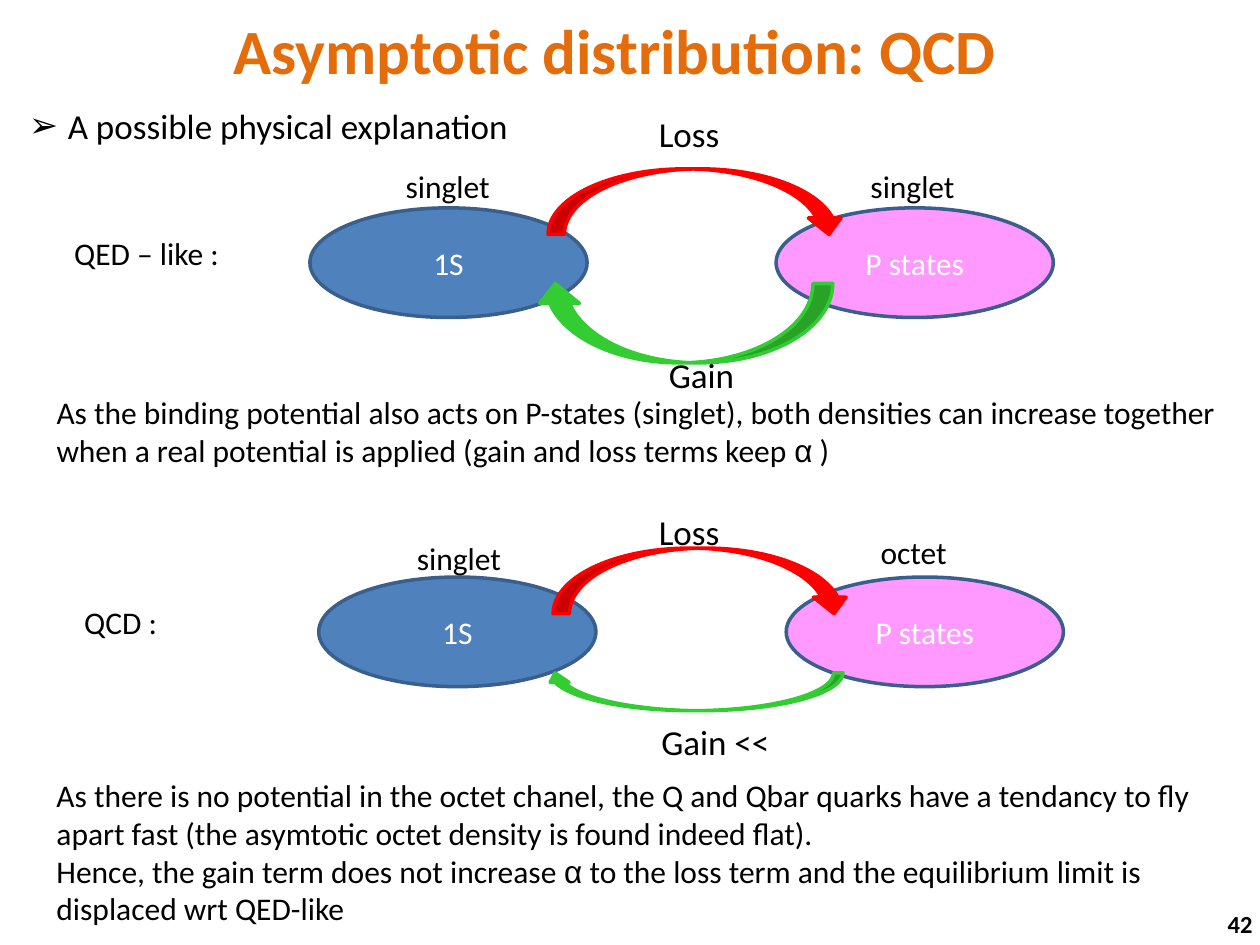
from lxml.etree import SubElement
from pptx import Presentation
from pptx.dml.color import RGBColor
from pptx.enum.shapes import MSO_SHAPE
from pptx.enum.text import MSO_ANCHOR, PP_ALIGN
from pptx.oxml.ns import qn
from pptx.util import Inches, Pt

BLACK, WHITE, ORANGE = "000000", "FFFFFF", "E46C0A"
BLUE, PINK, OUTLINE = "4F81BD", "FF99FF", "3A5F8C"
RED, GREEN = "FF0000", "33CC33"
BODY = {"size": Pt(18), "bold": False}
LABEL = {"size": Pt(20), "bold": False}
TITLE = {"size": Pt(36), "bold": True}
PAGE_NUMBER = {"size": Pt(14), "bold": True}

EXPLANATION = "A possible physical explanation"
QED_CONCLUSION = [
    "As the binding potential also acts on P-states (singlet), both densities "
    "can increase together when a real potential is applied "
    "(gain and loss terms keep α )",
]
QCD_CONCLUSION = [
    "As there is no potential in the octet chanel, the Q and Qbar quarks have "
    "a tendancy to fly apart fast (the asymtotic octet density is found indeed flat).",
    "Hence, the gain term does not increase α to the loss term and the "
    "equilibrium limit is displaced wrt QED-like",
]


def rgb(hex_color):
    """Turn a hex string into a colour."""
    return RGBColor.from_string(hex_color)


def write(paragraph, text, font_format, color=BLACK, align=PP_ALIGN.LEFT):
    """Fill a paragraph, setting Greek letters in Arial."""
    paragraph.alignment = align
    for piece in filter(None, text.replace("α", "|α|").split("|")):
        run = paragraph.add_run()
        run.text = piece
        run.font.name = "Arial" if piece == "α" else "Calibri"
        run.font.color.rgb = rgb(color)
        for name, value in font_format.items():
            setattr(run.font, name, value)


def add_text(slide, box, lines, font_format, color=BLACK, align=PP_ALIGN.LEFT,
             anchor=MSO_ANCHOR.TOP, wrap=True):
    """Add a text box with one paragraph per line."""
    frame = slide.shapes.add_textbox(*map(Inches, box)).text_frame
    frame.word_wrap = wrap
    frame.vertical_anchor = anchor
    for index, line in enumerate(lines):
        paragraph = frame.add_paragraph() if index else frame.paragraphs[0]
        write(paragraph, line, font_format, color, align)
    return frame


def add_label(slide, box, text, font_format=BODY):
    """Add a one-line label that does not wrap."""
    add_text(slide, box, [text], font_format, wrap=False)


def add_bullet(paragraph, mark):
    """Give a paragraph a hanging bullet."""
    properties = paragraph._p.get_or_add_pPr()
    properties.set("marL", str(Inches(0.31)))
    properties.set("indent", str(-Inches(0.31)))
    SubElement(properties, qn("a:buFont"), typeface="Arial")
    SubElement(properties, qn("a:buChar"), char=mark)


def add_figure(slide, kind, box, fill, line):
    """Add a filled and outlined preset shape."""
    figure = slide.shapes.add_shape(kind, *map(Inches, box))
    figure.shadow.inherit = False
    figure.fill.solid()
    figure.fill.fore_color.rgb = rgb(fill)
    figure.line.color.rgb = rgb(line)
    figure.line.width = Pt(2)
    return figure


def add_state(slide, left, top, name, fill):
    """Add an ellipse naming a quantum state."""
    state = add_figure(slide, MSO_SHAPE.OVAL, (left, top, 2.2, 0.87), fill, OUTLINE)
    state.text_frame.vertical_anchor = MSO_ANCHOR.MIDDLE
    write(state.text_frame.paragraphs[0], name, BODY, WHITE, PP_ALIGN.CENTER)


def add_transition(slide, left, top, height, color, rotation=0):
    """Add a curved arrow between the two states."""
    arrow = add_figure(slide, MSO_SHAPE.CURVED_DOWN_ARROW,
                       (left, top, 2.36, height), color, color)
    arrow.rotation = rotation


def add_qed_diagram(slide):
    """Draw the QED-like exchange with balanced gain and loss."""
    add_label(slide, (0.49, 1.81, 1.42, 0.4), "QED – like :")
    add_state(slide, 2.46, 1.65, "1S", BLUE)
    add_state(slide, 6.16, 1.65, "P states", PINK)
    add_transition(slide, 4.35, 1.34, 0.52, RED)
    add_label(slide, (5.13, 0.84, 0.69, 0.44), "Loss", LABEL)
    add_transition(slide, 4.25, 2.25, 0.63, GREEN, 180)
    add_label(slide, (5.21, 2.76, 0.73, 0.44), "Gain", LABEL)
    for left in (3.12, 6.81):
        add_label(slide, (left, 1.28, 0.88, 0.4), "singlet")


def add_qcd_diagram(slide):
    """Draw the QCD exchange with a weak gain."""
    add_label(slide, (0.57, 4.74, 0.85, 0.4), "QCD :")
    add_state(slide, 2.53, 4.58, "1S", BLUE)
    add_state(slide, 6.24, 4.58, "P states", PINK)
    add_label(slide, (5.13, 4, 0.69, 0.44), "Loss", LABEL)
    add_transition(slide, 4.33, 5.34, 0.3, GREEN, 180)
    add_label(slide, (5.15, 5.67, 1.07, 0.44), "Gain <<", LABEL)
    add_transition(slide, 4.39, 4.35, 0.52, RED)
    add_label(slide, (3.21, 4.23, 0.88, 0.4), "singlet")
    add_label(slide, (6.89, 4.18, 0.73, 0.4), "octet")


def main():
    """Build and save the slide."""
    deck = Presentation()
    deck.slide_width, deck.slide_height = Inches(10), Inches(7.5)
    slide = deck.slides.add_slide(deck.slide_layouts[6])
    add_text(slide, (7.71, 7.13, 2.33, 0.4), ["42"], PAGE_NUMBER,
             align=PP_ALIGN.RIGHT, anchor=MSO_ANCHOR.MIDDLE)
    add_text(slide, (-0.12, 0.08, 10, 0.63), ["Asymptotic distribution: QCD"],
             TITLE, ORANGE, PP_ALIGN.CENTER, MSO_ANCHOR.MIDDLE)
    explanation = add_text(slide, (0.13, 0.78, 9.51, 0.44), [EXPLANATION], LABEL)
    add_bullet(explanation.paragraphs[0], "➢")
    add_text(slide, (0.35, 6.11, 9.47, 1.31), QCD_CONCLUSION, BODY)
    add_qed_diagram(slide)
    add_text(slide, (0.35, 3.07, 9.61, 0.71), QED_CONCLUSION, BODY)
    add_qcd_diagram(slide)
    deck.save("out.pptx")


if __name__ == "__main__":
    main()
